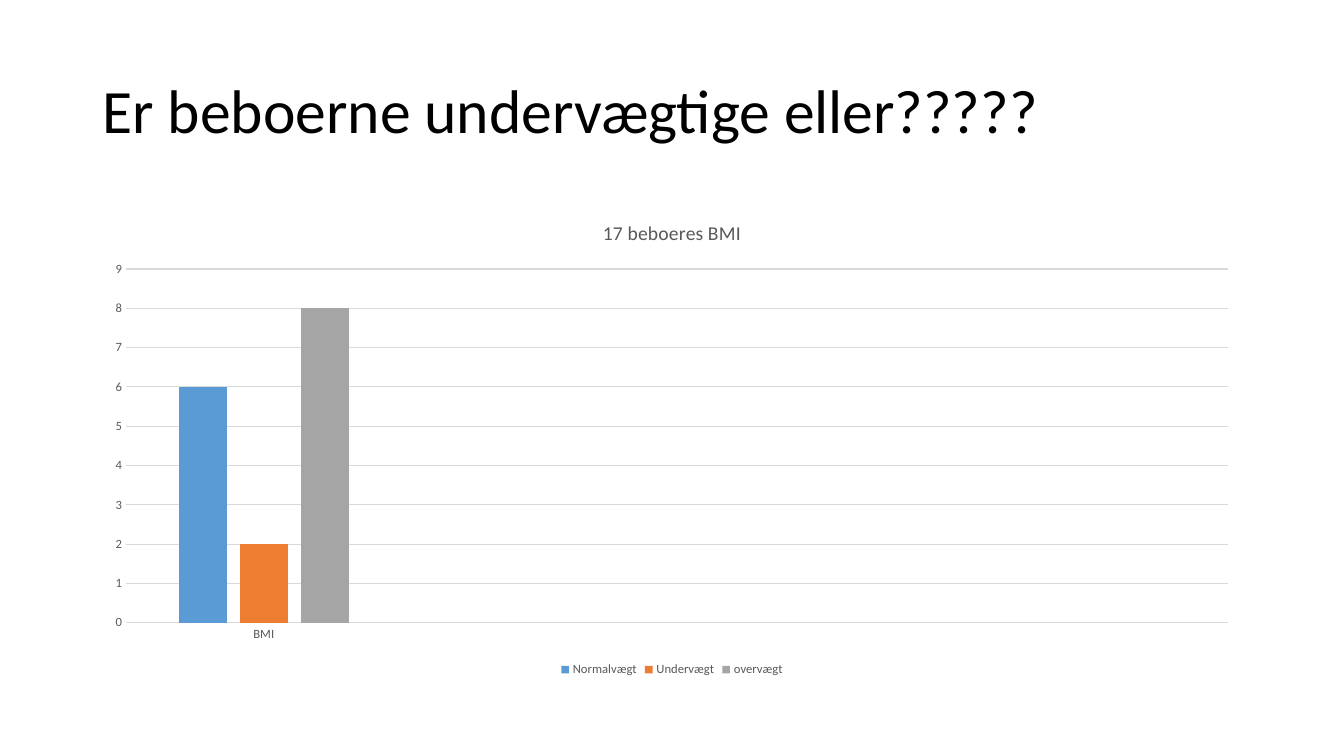
import dataclasses

import pptx
import pptx.chart.data
import pptx.dml.color
import pptx.enum.chart
import pptx.enum.text
import pptx.util
from pptx.util import Cm


@dataclasses.dataclass(frozen=True)
class Theme:
    font: str = "Calibri"
    black: str = "000000"
    gray: str = "595959"
    grid: str = "D9D9D9"
    white: str = "FFFFFF"
    series: tuple = ("5B9BD5", "ED7D31", "A5A5A5")
    title_size: float = 44
    chart_title_size: float = 14
    label_size: float = 9
    line_width: float = 0.75


THEME = Theme()
LEFT, WIDTH = Cm(2.33), Cm(29.21)
# The last three categories are unlabelled and have no values
CATEGORIES = ("BMI", "", "", "")
WEIGHT_GROUPS = {"Normalvægt": 6, "Undervægt": 2, "overvægt": 8}


def rgb(color):
    return pptx.dml.color.RGBColor.from_string(color)


def style_font(font, size, color):
    font.name = THEME.font
    font.size = pptx.util.Pt(size)
    font.bold = False
    font.color.rgb = rgb(color)


def style_line(line):
    line.color.rgb = rgb(THEME.grid)
    line.width = pptx.util.Pt(THEME.line_width)


def add_title(slide, text):
    sp = slide.shapes.title
    sp.left, sp.top, sp.width, sp.height = LEFT, Cm(1.01), WIDTH, Cm(3.68)
    tf = sp.text_frame
    tf.text = text
    tf.word_wrap = True
    tf.auto_size = pptx.enum.text.MSO_AUTO_SIZE.NONE
    tf.vertical_anchor = pptx.enum.text.MSO_ANCHOR.MIDDLE
    p = tf.paragraphs[0]
    p.alignment = pptx.enum.text.PP_ALIGN.LEFT
    p.line_spacing = 0.9
    style_font(p.font, THEME.title_size, THEME.black)


def style_axis(axis):
    axis.major_tick_mark = pptx.enum.chart.XL_TICK_MARK.NONE
    axis.minor_tick_mark = pptx.enum.chart.XL_TICK_MARK.NONE
    style_font(axis.tick_labels.font, THEME.label_size, THEME.gray)


def add_bmi_chart(slide, title):
    data = pptx.chart.data.CategoryChartData()
    data.categories = CATEGORIES
    for name, count in WEIGHT_GROUPS.items():
        data.add_series(name, (count, None, None, None))
    chart = slide.shapes.add_chart(
        pptx.enum.chart.XL_CHART_TYPE.COLUMN_CLUSTERED,
        LEFT, Cm(5.07), WIDTH, Cm(12.09), data,
    ).chart
    style_font(chart.font, 10, THEME.black)

    # Chart title
    chart.has_title = True
    tf = chart.chart_title.text_frame
    tf.text = title
    style_font(tf.paragraphs[0].font, THEME.chart_title_size, THEME.gray)
    chart.chart_title.include_in_layout = False

    # Columns
    plot = chart.plots[0]
    plot.gap_width = 219
    plot.overlap = -27
    plot.vary_by_categories = False
    for series, color in zip(plot.series, THEME.series):
        series.format.fill.solid()
        series.format.fill.fore_color.rgb = rgb(color)

    # Axes
    style_axis(chart.category_axis)
    style_line(chart.category_axis.format.line)
    style_axis(chart.value_axis)
    chart.value_axis.format.line.fill.background()
    chart.value_axis.minimum_scale = 0
    chart.value_axis.maximum_scale = 9
    chart.value_axis.major_unit = 1
    chart.value_axis.has_major_gridlines = True
    style_line(chart.value_axis.major_gridlines.format.line)

    # Legend
    chart.has_legend = True
    chart.legend.position = pptx.enum.chart.XL_LEGEND_POSITION.BOTTOM
    chart.legend.include_in_layout = False
    style_font(chart.legend.font, THEME.label_size, THEME.gray)


def main():
    prs = pptx.Presentation()
    prs.slide_width, prs.slide_height = Cm(33.87), Cm(19.05)
    slide = prs.slides.add_slide(prs.slide_layouts.get_by_name("Title Only"))
    slide.background.fill.solid()
    slide.background.fill.fore_color.rgb = rgb(THEME.white)
    add_title(slide, "Er beboerne undervægtige eller?????")
    add_bmi_chart(slide, "17 beboeres BMI")
    prs.save("out.pptx")


if __name__ == "__main__":
    main()
